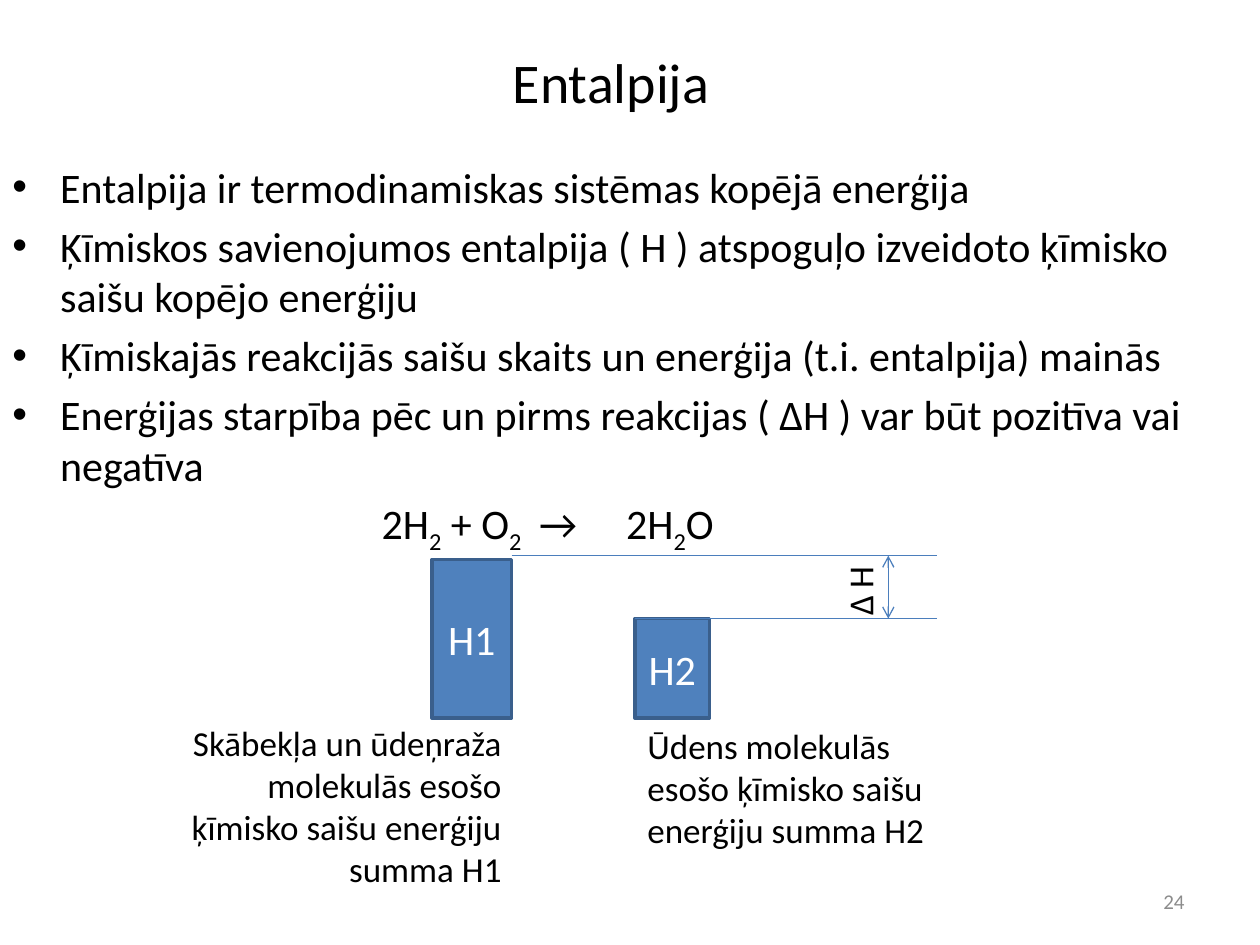
from lxml import etree
from pptx import Presentation
from pptx import util as u
from pptx.dml.color import RGBColor
from pptx.enum import shapes, text
from pptx.oxml.ns import qn

# Content
TITLE = "Entalpija"
POINTS = [
    "Entalpija ir termodinamiskas sistēmas kopējā enerģija",
    "Ķīmiskos savienojumos entalpija ( H ) atspoguļo izveidoto ķīmisko saišu kopējo enerģiju",
    "Ķīmiskajās reakcijās saišu skaits un enerģija (t.i. entalpija) mainās",
    "Enerģijas starpība pēc un pirms reakcijas ( ΔH ) var būt pozitīva vai negatīva",
]
# Reaction as (text, is subscript); tabs set off the arrow and the product
REACTION = [("2H", False), ("2", True), (" + O", False), ("2", True),
            ("\t→\t2H", False), ("2", True), ("O", False)]
REACTION_TABS = [1.25, 1.94]
LEFT, CENTER, RIGHT = text.PP_ALIGN.LEFT, text.PP_ALIGN.CENTER, text.PP_ALIGN.RIGHT
# Energy bars: label, left, top, width
BARS = [("H1", 3.43, 4.44, 0.63), ("H2", 5.04, 4.91, 0.59)]
BAR_BOTTOM = 5.7
CAPTIONS = [
    ("Skābekļa un ūdeņraža molekulās esošo ķīmisko saišu enerģiju summa H1",
     (1.25, 5.68, 2.83, 1.45), RIGHT),
    ("Ūdens molekulās esošo ķīmisko saišu enerģiju summa H2",
     (5.04, 5.7, 2.83, 1.11), LEFT),
]
LEVEL_H1, LEVEL_H2, LEVEL_END, DELTA_X = 4.41, 4.91, 7.44, 7.05

THEME = {
    "font": "Calibri",
    "ink": "000000", "bar": "4F81BD", "bar_edge": "3A5F8C",
    "bar_text": "FFFFFF", "level": "4B7EBC", "muted": "8C8C8C",
    "title": 32, "body": 24, "caption": 20, "number": 12,
}


def color(name):
    return RGBColor.from_string(THEME[name])


def style(paragraph, size, ink="ink", align=LEFT):
    paragraph.alignment = align
    paragraph.font.name = THEME["font"]
    paragraph.font.size = u.Pt(THEME[size])
    paragraph.font.color.rgb = color(ink)


def add_text(slide, box, words="", size="body", ink="ink", align=LEFT,
             anchor=text.MSO_ANCHOR.TOP):
    label = slide.shapes.add_textbox(*map(u.Inches, box))
    frame = label.text_frame
    frame.word_wrap = True
    frame.vertical_anchor = anchor
    frame.text = words
    style(frame.paragraphs[0], size, ink, align)
    return label


def add_points(slide):
    frame = add_text(slide, (0, 1.23, 9.5, 3.97)).text_frame
    for i, point in enumerate(POINTS):
        paragraph = frame.add_paragraph() if i else frame.paragraphs[0]
        paragraph.text = point
        if i:
            paragraph.space_before = u.Pt(5)
        props = paragraph._p.get_or_add_pPr()
        props.set("marL", str(u.Inches(0.38)))
        props.set("indent", str(-u.Inches(0.38)))
        # Bullet elements go ahead of the default run properties
        for old in props.findall(qn("a:defRPr")):
            props.remove(old)
        etree.SubElement(props, qn("a:buFont"), typeface="Arial")
        etree.SubElement(props, qn("a:buChar"), char="•")
        style(paragraph, "body")


def add_reaction(slide):
    box = slide.shapes.add_textbox(*map(u.Inches, (2.93, 3.9, 3.18, 0.5)))
    box.text_frame.word_wrap = True
    paragraph = box.text_frame.paragraphs[0]
    tabs = etree.SubElement(paragraph._p.get_or_add_pPr(), qn("a:tabLst"))
    for stop in REACTION_TABS:
        etree.SubElement(tabs, qn("a:tab"), pos=str(u.Inches(stop)), algn="l")
    style(paragraph, "body")
    for words, is_subscript in REACTION:
        run = paragraph.add_run()
        run.text = words
        if is_subscript:
            run._r.get_or_add_rPr().set("baseline", "-25000")


def add_bar(slide, name, left, top, width):
    bar = slide.shapes.add_shape(
        shapes.MSO_SHAPE.RECTANGLE,
        *map(u.Inches, (left, top, width, BAR_BOTTOM - top)))
    bar.shadow.inherit = False
    bar.fill.solid()
    bar.fill.fore_color.rgb = color("bar")
    bar.line.color.rgb = color("bar_edge")
    bar.line.width = u.Pt(2)
    frame = bar.text_frame
    frame.margin_left = frame.margin_right = 0
    frame.vertical_anchor = text.MSO_ANCHOR.MIDDLE
    frame.text = name
    style(frame.paragraphs[0], "body", "bar_text", CENTER)


def add_line(slide, x1, y1, x2, y2, arrows=False):
    line = slide.shapes.add_connector(
        shapes.MSO_CONNECTOR.STRAIGHT, *map(u.Inches, (x1, y1, x2, y2)))
    line.line.color.rgb = color("level")
    line.line.width = u.Pt(0.75)
    if arrows:
        for end in ("a:headEnd", "a:tailEnd"):
            etree.SubElement(line.line._get_or_add_ln(), qn(end), type="arrow")
    etree.SubElement(line._element.spPr, qn("a:effectLst"))


def main():
    deck = Presentation()
    deck.slide_width, deck.slide_height = u.Inches(10), u.Inches(7.5)
    slide = deck.slides.add_slide(deck.slide_layouts[6])
    middle = text.MSO_ANCHOR.MIDDLE

    # Title and bullet points
    add_text(slide, (0.2, 0.02, 9.3, 1.25), TITLE, "title", align=CENTER, anchor=middle)
    add_points(slide)

    # Energy diagram
    for bar in BARS:
        add_bar(slide, *bar)
    add_reaction(slide)
    for words, box, align in CAPTIONS:
        add_text(slide, box, words, "caption", align=align)

    # Energy levels and their difference
    add_line(slide, 4.06, LEVEL_H1, LEVEL_END, LEVEL_H1)
    add_line(slide, 5.04, LEVEL_H2, LEVEL_END, LEVEL_H2)
    add_line(slide, DELTA_X, LEVEL_H1, DELTA_X, LEVEL_H2, arrows=True)
    delta = add_text(slide, (6.39, 4.33, 0.87, 0.44), "Δ H", "caption")
    delta.rotation = 270

    # Slide number
    add_text(slide, (7.17, 6.95, 2.33, 0.4), "24", "number", "muted", RIGHT, middle)

    deck.save("out.pptx")


if __name__ == "__main__":
    main()
